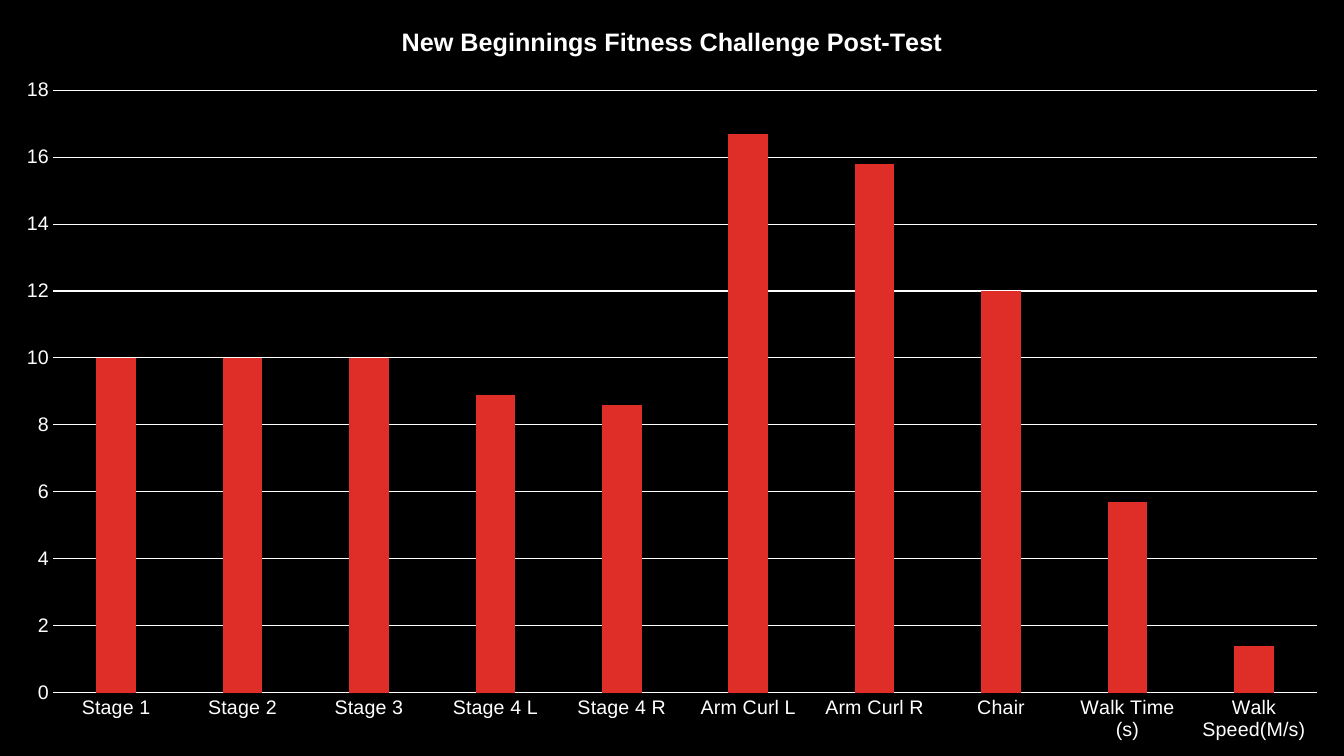
"""Build a slide with a full-page column chart of fitness post-test results."""
import pptx
import pptx.chart.data
import pptx.dml.color
import pptx.enum.chart
import pptx.util

Pt = pptx.util.Pt
COLOURS = {"background": "000000", "text": "FFFFFF", "column": "DF2E28"}
WIDTH, HEIGHT = Pt(960), Pt(540)
TITLE = "New Beginnings Fitness Challenge Post-Test"
RESULTS = {
    "Stage 1": 10,
    "Stage 2": 10,
    "Stage 3": 10,
    "Stage 4 L": 8.9,
    "Stage 4 R": 8.6,
    "Arm Curl L": 16.7,
    "Arm Curl R": 15.8,
    "Chair": 12,
    "Walk Time (s)": 5.7,
    "Walk Speed(M/s)": 1.4,
}


def colour(name):
    return pptx.dml.color.RGBColor.from_string(COLOURS[name])


def paint(fill, name):
    fill.solid()
    fill.fore_color.rgb = colour(name)


def style_font(font, size, face="Arial", bold=False):
    font.name = face
    font.size = Pt(size)
    font.bold = bold
    font.color.rgb = colour("text")


def style_line(line):
    line.width = Pt(0.75)
    line.color.rgb = colour("text")


def style_axis(axis):
    axis.major_tick_mark = pptx.enum.chart.XL_TICK_MARK.NONE
    axis.minor_tick_mark = pptx.enum.chart.XL_TICK_MARK.NONE
    style_font(axis.tick_labels.font, 14)


def add_title(chart):
    chart.has_title = True
    frame = chart.chart_title.text_frame
    frame.text = TITLE
    style_font(frame.paragraphs[0].runs[0].font, 18, bold=True)
    chart.chart_title.include_in_layout = False


def add_results_chart(page):
    data = pptx.chart.data.CategoryChartData()
    data.categories = list(RESULTS)
    data.add_series("Series 1", list(RESULTS.values()))
    kind = pptx.enum.chart.XL_CHART_TYPE.COLUMN_CLUSTERED
    chart = page.shapes.add_chart(kind, 0, 0, WIDTH, HEIGHT, data).chart
    style_font(chart.font, 10, "TeX Gyre Adventor")
    chart.has_legend = False
    add_title(chart)

    plot = chart.plots[0]
    plot.vary_by_categories = False
    plot.gap_width = 219
    plot.overlap = -27
    paint(plot.series[0].format.fill, "column")

    style_axis(chart.category_axis)
    style_line(chart.category_axis.format.line)

    values = chart.value_axis
    style_axis(values)
    values.minimum_scale = 0
    values.maximum_scale = 18
    values.major_unit = 2
    values.format.line.fill.background()
    values.has_major_gridlines = True
    style_line(values.major_gridlines.format.line)


def main():
    deck = pptx.Presentation()
    deck.slide_width, deck.slide_height = WIDTH, HEIGHT
    page = deck.slides.add_slide(deck.slide_layouts[6])
    paint(page.background.fill, "background")
    add_results_chart(page)
    deck.save("out.pptx")


if __name__ == "__main__":
    main()
